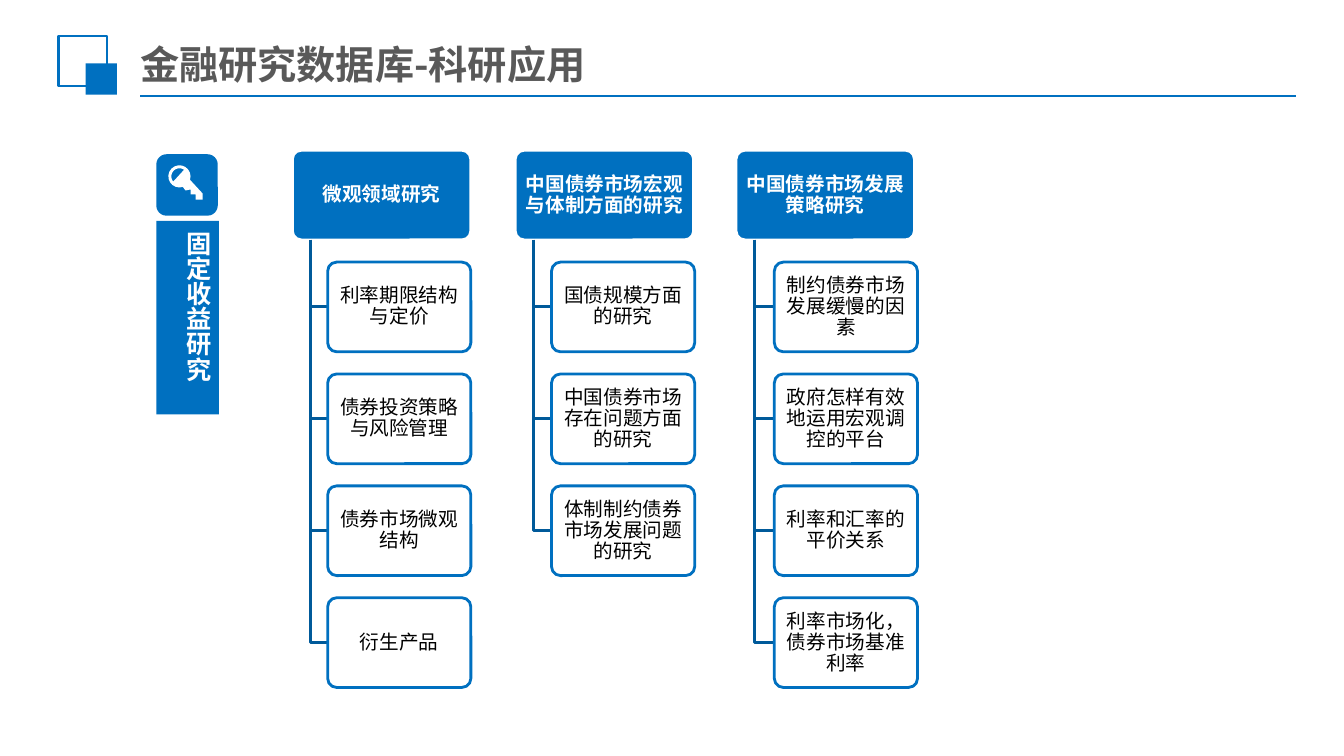
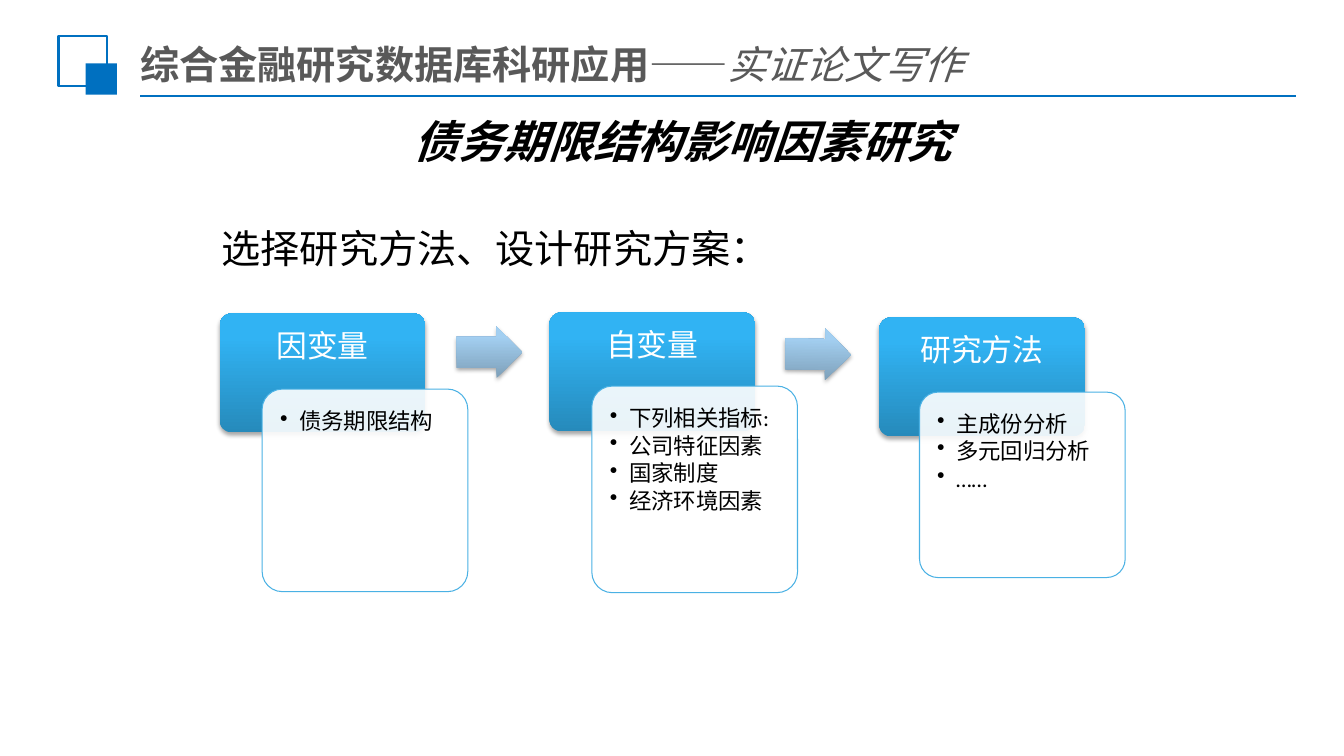
from math import cos, radians, sin

from lxml.etree import SubElement
from pptx import Presentation
from pptx.dml.color import RGBColor
from pptx.enum.shapes import MSO_CONNECTOR, MSO_SHAPE as SHAPE
from pptx.enum.text import MSO_ANCHOR as ANCHOR, MSO_AUTO_SIZE, PP_ALIGN as ALIGN
from pptx.oxml.ns import qn
from pptx.util import Inches, Pt

BLUE = RGBColor(0x00, 0x70, 0xC0)
DEEP_BLUE = RGBColor(0x00, 0x5A, 0x9A)
SKY_BLUE = RGBColor(0x4A, 0xB1, 0xE4)
GRAY = RGBColor(0x59, 0x59, 0x59)
WHITE = RGBColor(0xFF, 0xFF, 0xFF)
BLACK = RGBColor(0x00, 0x00, 0x00)
CARD_GRADIENT = (RGBColor(0x26, 0x8A, 0xBB), RGBColor(0x31, 0xB3, 0xF3))
ARROW_GRADIENT = (RGBColor(0x7E, 0xA0, 0xB9), RGBColor(0xA3, 0xCF, 0xF1))
SANS = "Noto Sans CJK SC"
SERIF = "Times New Roman"
TITLE_ONLY = 5


def points_on_arc(center, radius, start, end, steps=16):
    """Points in inches along an arc; angles in degrees, clockwise on the slide."""
    angles = [radians(start + (end - start) * i / steps) for i in range(steps + 1)]
    return [(center[0] + radius * cos(a), center[1] + radius * sin(a)) for a in angles]


class SlideWriter:
    def __init__(self):
        self.deck = Presentation()
        self.deck.slide_width, self.deck.slide_height = Inches(13.33), Inches(7.5)
        self.slide = None

    def new_slide(self, title_parts):
        """Start a slide; title_parts are (text, font, bold, italic)."""
        self.slide = self.deck.slides.add_slide(self.deck.slide_layouts[TITLE_ONLY])
        rule = self.slide.shapes.add_connector(
            MSO_CONNECTOR.STRAIGHT, Inches(1.39), Inches(0.95), Inches(12.85), Inches(0.95))
        rule.line.color.rgb, rule.line.width = BLUE, Pt(1.25)
        SubElement(rule._element.spPr, qn("a:effectLst"))
        self.shape(SHAPE.RECTANGLE, 0.58, 0.36, 0.48, 0.49, line=BLUE, width=1.5)
        self.shape(SHAPE.RECTANGLE, 0.85, 0.63, 0.31, 0.31, fill=BLUE)

        title = self.slide.shapes.title
        title.left, title.top = Inches(1.32), Inches(0.39)
        title.width, title.height = Inches(8.6), Inches(0.48)
        self.frame(title, (0.07, 0.04, 0.07, 0.04), ANCHOR.MIDDLE)
        para = title.text_frame.paragraphs[0]
        self.style(para, 28, GRAY)
        for text, font, bold, italic in title_parts:
            span = para.add_run()
            span.text = text
            span.font.name, span.font.bold, span.font.italic = font, bold, italic

    def frame(self, box, insets, anchor):
        frame = box.text_frame
        frame.word_wrap, frame.auto_size = True, MSO_AUTO_SIZE.NONE
        frame.vertical_anchor = anchor
        (frame.margin_left, frame.margin_top,
         frame.margin_right, frame.margin_bottom) = map(Inches, insets)

    def style(self, para, size, color, font=SANS, bold=False, italic=False,
              align=ALIGN.LEFT, leading=None):
        para.alignment = align
        if leading:
            para.line_spacing = Pt(leading)
        para.font.name, para.font.size = font, Pt(size)
        para.font.bold, para.font.italic = bold, italic
        para.font.color.rgb = color
        defaults = para._p.pPr.find(qn("a:defRPr"))
        SubElement(defaults, qn("a:ea")).set("typeface", SANS)

    def paint(self, shape, fill=None, line=None, width=1.0, alpha=None):
        """Fill may be a colour, a (bottom, top) gradient or None."""
        shape.shadow.inherit = False
        if fill is None:
            shape.fill.background()
        elif isinstance(fill, RGBColor):
            shape.fill.solid()
            shape.fill.fore_color.rgb = fill
        else:
            shape.fill.gradient()
            shape.fill.gradient_angle = 90
            for stop, color, position in zip(shape.fill.gradient_stops, fill, (0, 0.8)):
                stop.color.rgb, stop.position = color, position
        if alpha:
            color = shape._element.spPr.find(qn("a:solidFill")).find(qn("a:srgbClr"))
            SubElement(color, qn("a:alpha")).set("val", str(alpha * 1000))
        if line is None:
            shape.line.fill.background()
        else:
            shape.line.color.rgb, shape.line.width = line, Pt(width)

    def shape(self, kind, left, top, width_in, height, corner=None, **paint):
        shape = self.slide.shapes.add_shape(
            kind, Inches(left), Inches(top), Inches(width_in), Inches(height))
        if corner is not None:
            shape.adjustments[0] = corner
        self.paint(shape, **paint)
        return shape

    def label(self, box, text, size, color, insets=(0.1, 0.05, 0.1, 0.05),
              anchor=ANCHOR.MIDDLE, **style):
        self.frame(box, insets, anchor)
        para = box.text_frame.paragraphs[0]
        para.text = text
        self.style(para, size, color, **style)

    def text(self, left, top, width, height, text, size, color, **style):
        box = self.slide.shapes.add_textbox(
            Inches(left), Inches(top), Inches(width), Inches(height))
        self.label(box, text, size, color, **style)

    def bullets(self, box, items):
        self.frame(box, (0.12, 0.15, 0.12, 0.12), ANCHOR.TOP)
        for index, item in enumerate(items):
            frame = box.text_frame
            para = frame.add_paragraph() if index else frame.paragraphs[0]
            para.text = item
            para.space_after = Pt(2.4)
            props = para._p.get_or_add_pPr()
            props.set("marL", str(Inches(0.19)))
            props.set("indent", str(-Inches(0.19)))
            SubElement(props, qn("a:buChar")).set("char", "•")
            self.style(para, 16, BLACK, font="Calibri", leading=17.2)

    def outline(self, *contours, closed=False, **paint):
        """Draw one freeform from lists of points given in inches."""
        contours = [[(Inches(x), Inches(y)) for x, y in points] for points in contours]
        builder = self.slide.shapes.build_freeform(*contours[0][0], scale=1.0)
        for index, points in enumerate(contours):
            if index:
                builder.move_to(*points[0])
            builder.add_line_segments(points[1:], close=closed)
        self.paint(builder.convert_to_shape(), **paint)

    def drop_shadow(self, shape):
        effects = shape._element.spPr.find(qn("a:effectLst"))
        shadow = SubElement(effects, qn("a:outerShdw"), blurRad=str(Pt(3.1)),
                            dist=str(Pt(1.8)), dir="5400000", rotWithShape="0")
        color = SubElement(shadow, qn("a:srgbClr"), val="000000")
        SubElement(color, qn("a:alpha"), val="35000")

    def key_badge(self):
        self.shape(SHAPE.ROUNDED_RECTANGLE, 1.55, 1.53, 0.61, 0.61, fill=BLUE)
        center = (1.78, 1.75)
        shaft = [(1.84, 1.89), (1.89, 1.88), (1.89, 1.93), (1.94, 1.93),
                 (1.94, 1.98), (2.01, 1.98), (2.01, 1.92)]
        self.outline(points_on_arc(center, 0.11, 18, -288) + shaft,
                     points_on_arc(center, 0.08, 140, 305), closed=True, fill=WHITE)

    def topic_column(self, left, item_left, heading, items):
        """A heading with its items hanging from a trunk line."""
        insets = (0.03, 0.02, 0.03, 0.02)
        head = self.shape(SHAPE.ROUNDED_RECTANGLE, left, 1.49, 1.77, 0.89, corner=0.1,
                          fill=BLUE, line=WHITE, width=2)
        self.label(head, heading, 14, WHITE, insets, bold=True,
                   align=ALIGN.CENTER, leading=15)
        trunk = left + 0.18
        for row, item in enumerate(items):
            top = 2.6 + 1.11 * row
            middle = top + 0.44
            self.outline([(trunk, 2.38), (trunk, middle), (item_left, middle)],
                         line=DEEP_BLUE, width=2)
            box = self.shape(SHAPE.ROUNDED_RECTANGLE, item_left, top, 1.42, 0.89,
                             corner=0.1, fill=WHITE, alpha=90, line=BLUE, width=2)
            self.label(box, item, 14, BLACK, insets, align=ALIGN.CENTER, leading=15)

    def step_card(self, left, top, heading, font, list_box, items):
        """A gradient card overlapped by a bullet list; list_box is left, top, height."""
        card = self.shape(SHAPE.ROUNDED_RECTANGLE, left, top, 2.04, 1.18, corner=0.1,
                          fill=CARD_GRADIENT)
        self.drop_shadow(card)
        self.label(card, heading, 22, WHITE, (0.14, 0.1, 0.14, 0.09), ANCHOR.TOP,
                   font=font, align=ALIGN.CENTER)
        list_left, list_top, list_height = list_box
        box = self.shape(SHAPE.ROUNDED_RECTANGLE, list_left, list_top, 2.04, list_height,
                         corner=0.1, fill=WHITE, alpha=90, line=SKY_BLUE, width=0.75)
        self.bullets(box, items)

    def step_arrow(self, left, top, rotation):
        arrow = self.shape(SHAPE.RIGHT_ARROW, left, top, 0.65, 0.51, corner=0.6,
                           fill=ARROW_GRADIENT)
        arrow.rotation = rotation
        self.drop_shadow(arrow)


def add_research_topics(writer):
    writer.new_slide([("金融研究数据库-科研应用", SANS, True, False)])
    banner = writer.shape(SHAPE.RECTANGLE, 1.55, 2.19, 0.62, 1.92, fill=BLUE)
    writer.label(banner, "固定收益研究", 18, WHITE, (0.05, 0.1, 0.05, 0.1),
                 ANCHOR.TOP, bold=True)
    banner.text_frame._txBody.bodyPr.set("vert", "eaVert")
    writer.key_badge()
    columns = [
        (2.9, 3.25, "微观领域研究",
         ["利率期限结构与定价", "债券投资策略与风险管理", "债券市场微观结构", "衍生产品"]),
        (5.11, 5.47, "中国债券市场宏观与体制方面的研究",
         ["国债规模方面的研究", "中国债券市场存在问题方面的研究",
          "体制制约债券市场发展问题的研究"]),
        (7.3, 7.68, "中国债券市场发展策略研究",
         ["制约债券市场发展缓慢的因素", "政府怎样有效地运用宏观调控的平台",
          "利率和汇率的平价关系", "利率市场化，债券市场基准利率"]),
    ]
    for column in columns:
        writer.topic_column(*column)


def add_study_design(writer):
    writer.new_slide([("综合金融研究数据库科研应用", SANS, True, False),
                      ("——", SANS, False, False),
                      ("实证论文写作", SERIF, False, True)])
    writer.text(2.11, 1.12, 9.33, 0.55, "债务期限结构影响因素研究", 32, BLACK,
                font=SERIF, bold=True, italic=True, align=ALIGN.CENTER)
    writer.text(2.1, 2.17, 7.17, 0.57, "选择研究方法、设计研究方案：", 28, BLACK)
    steps = [
        (2.18, 3.11, "因变量", "Calibri", (2.6, 3.86, 2.01), ["债务期限结构"]),
        (5.45, 3.1, "自变量", "Arial", (5.87, 3.83, 2.05),
         ["下列相关指标:", "公司特征因素", "国家制度", "经济环境因素"]),
        (8.72, 3.15, "研究方法", "Arial", (9.12, 3.89, 1.84),
         ["主成份分析", "多元回归分析", "……"]),
    ]
    for step in steps:
        writer.step_card(*step)
    writer.step_arrow(4.53, 3.24, 359.8)
    writer.step_arrow(7.79, 3.26, 0.9)


def main():
    writer = SlideWriter()
    add_research_topics(writer)
    add_study_design(writer)
    writer.deck.save("out.pptx")


if __name__ == "__main__":
    main()
